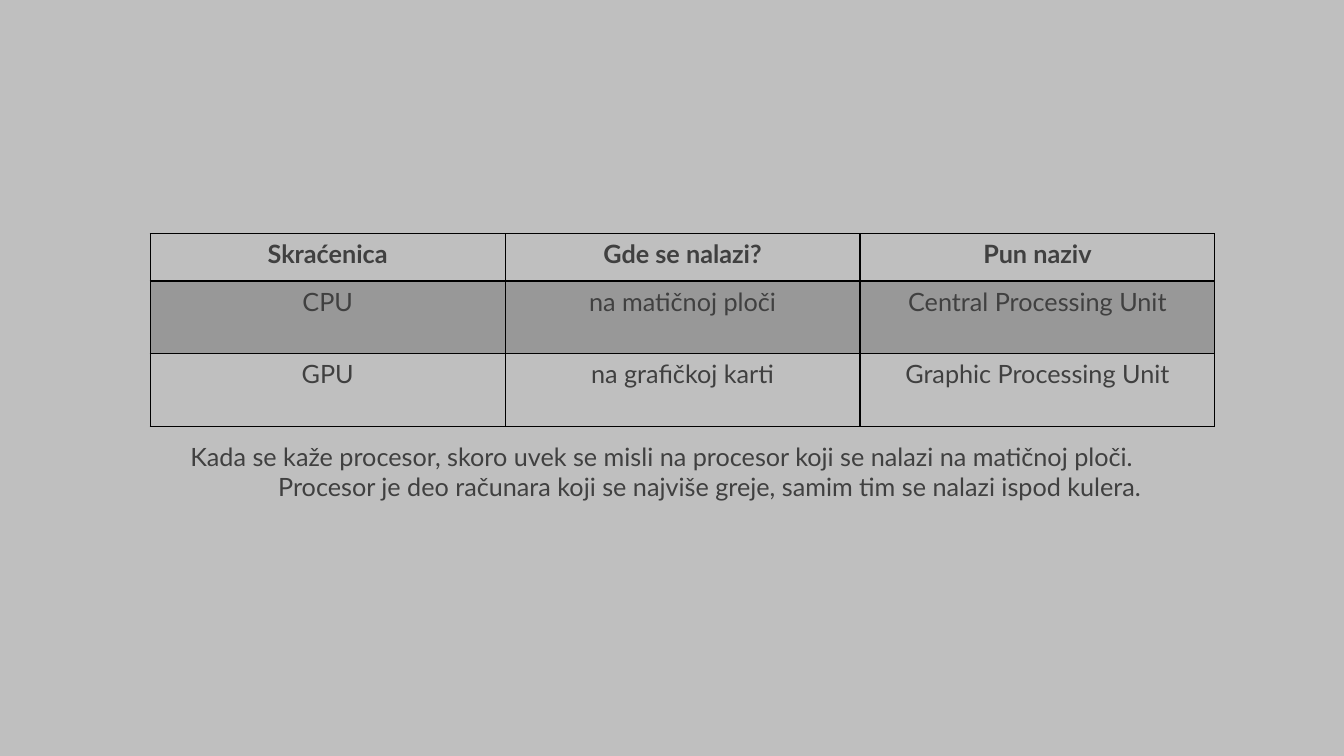
from lxml.etree import SubElement
from pptx import Presentation
from pptx.dml.color import RGBColor
from pptx.enum.text import MSO_AUTO_SIZE, PP_ALIGN
from pptx.oxml.ns import qn
from pptx.util import Inches, Pt

GREY = RGBColor(0xBF, 0xBF, 0xBF)
INK = RGBColor(0x40, 0x40, 0x40)
BLACK = RGBColor(0, 0, 0)

PROCESSORS = [
    ["Skraćenica", "Gde se nalazi?", "Pun naziv"],
    ["CPU", "na matičnoj ploči", "Central Processing Unit"],
    ["GPU", "na grafičkoj karti", "Graphic Processing Unit"],
]
NOTES = [
    ("Kada se kaže procesor, skoro uvek se misli na procesor "
     "koji se nalazi na matičnoj ploči.", PP_ALIGN.LEFT),
    ("Procesor je deo računara koji se najviše greje, samim tim "
     "se nalazi ispod kulera.", PP_ALIGN.CENTER),
]


class SlideBuilder:
    def __init__(self, prs):
        self.font, self.size = "Lato", Pt(18)
        self.s = prs.slides.add_slide(prs.slide_layouts[6])
        fill = self.s.background.fill
        fill.solid()
        fill.fore_color.rgb = GREY

    def set_paragraph(self, p, text, align, bold=False):
        p.text = text
        p.alignment = align
        p.font.name, p.font.size = self.font, self.size
        p.font.bold = bold
        p.font.color.rgb = INK

    def border(self, cell, side, width):
        tcPr = cell._tc.get_or_add_tcPr()
        ln = SubElement(tcPr, qn(f"a:ln{side}"), w=str(Pt(width)))
        solid = SubElement(ln, qn("a:solidFill"))
        SubElement(solid, qn("a:srgbClr"), val=str(BLACK))

    def shade(self, cell, percent):
        cell.fill.solid()
        cell.fill.fore_color.rgb = BLACK
        color = cell._tc.tcPr.find(qn("a:solidFill")).find(qn("a:srgbClr"))
        SubElement(color, qn("a:alpha"), val=str(percent * 1000))

    def table(self, rows, left, top, col_width, heights):
        """Draw a grid with a bold header, a thick rule under it and shaded odd rows."""
        n_cols = len(rows[0])
        table = self.s.shapes.add_table(
            len(rows), n_cols, Inches(left), Inches(top),
            Inches(col_width * n_cols), Inches(sum(heights))).table
        table.horz_banding = False
        for col in table.columns:
            col.width = Inches(col_width)
        for i, (texts, height) in enumerate(zip(rows, heights)):
            table.rows[i].height = Inches(height)
            widths = {"L": 1, "R": 1, "T": 2 if i == 1 else 1, "B": 2 if i == 0 else 1}
            for j, text in enumerate(texts):
                cell = table.cell(i, j)
                self.set_paragraph(cell.text_frame.paragraphs[0], text,
                                   PP_ALIGN.CENTER, i == 0)
                for side, width in widths.items():
                    self.border(cell, side, width)
                if i % 2:
                    self.shade(cell, 20)
                else:
                    cell.fill.background()

    def text(self, lines, left, top, width, height):
        tf = self.s.shapes.add_textbox(
            Inches(left), Inches(top), Inches(width), Inches(height)).text_frame
        tf.word_wrap = True
        tf.auto_size = MSO_AUTO_SIZE.SHAPE_TO_FIT_TEXT
        for i, (line, align) in enumerate(lines):
            p = tf.add_paragraph() if i else tf.paragraphs[0]
            self.set_paragraph(p, line, align)


def main():
    prs = Presentation()
    prs.slide_width, prs.slide_height = Inches(13.33), Inches(7.5)
    slide = SlideBuilder(prs)
    slide.table(PROCESSORS, 1.49, 2.32, 3.52, [0.47, 0.72, 0.72])
    slide.text(NOTES, 1.79, 4.33, 10.5, 0.71)
    prs.save("out.pptx")


if __name__ == "__main__":
    main()
